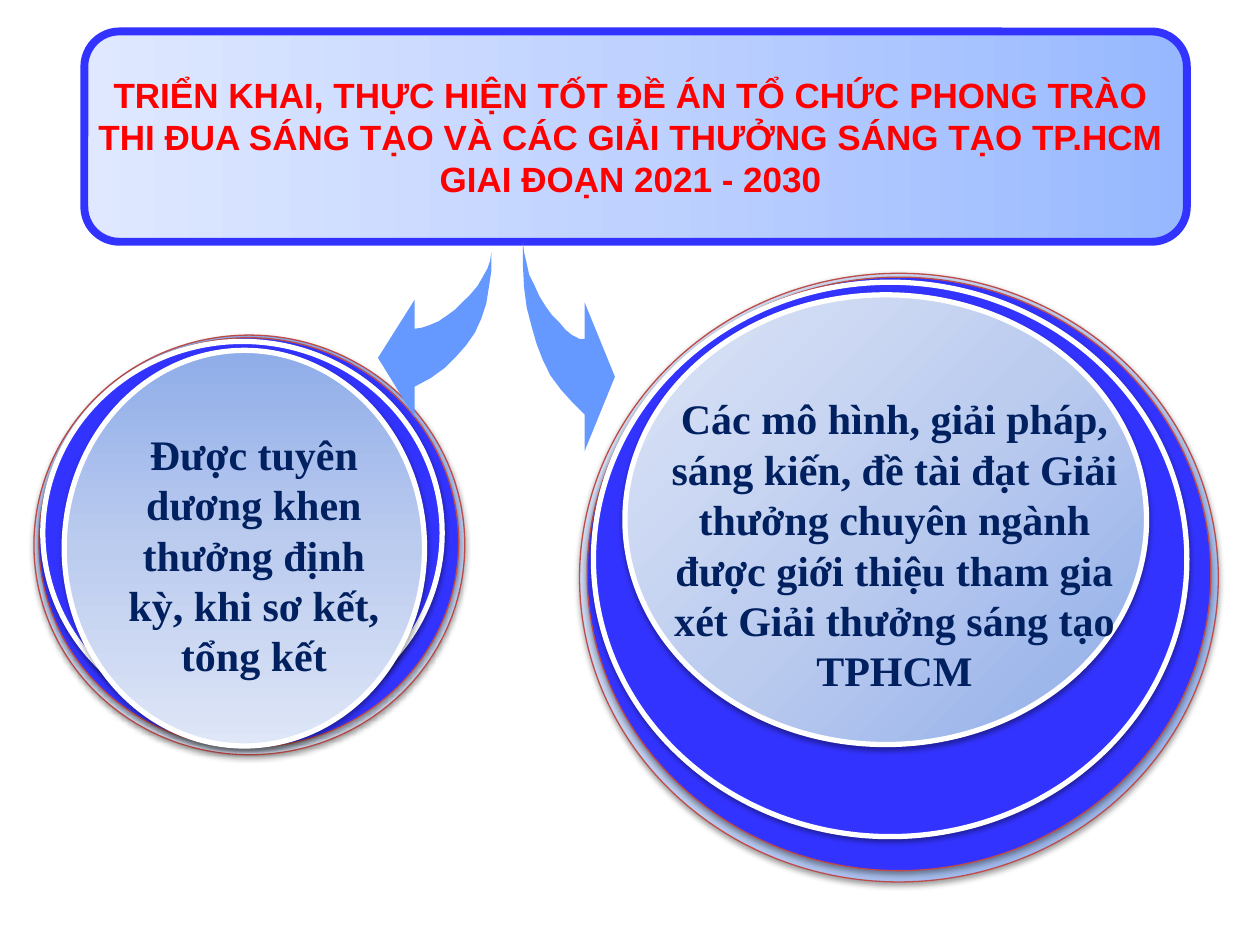
from pptx import Presentation
from pptx.dml.color import RGBColor
from pptx.enum.shapes import MSO_SHAPE as Shape
from pptx.enum.text import MSO_ANCHOR as Anchor, MSO_AUTO_SIZE as AutoSize, PP_ALIGN as Align
from pptx.oxml import parse_xml
from pptx.oxml.ns import nsdecls, qn
from pptx.util import Pt

SHADOW = (
    f'<a:outerShdw {nsdecls("a")} blurRad="40000" dist="20000" dir="5400000" rotWithShape="0">'
    '<a:srgbClr val="000000"><a:alpha val="38000"/></a:srgbClr></a:outerShdw>'
)
DOWN = '<a:lin ang="5400000" scaled="0"/>'
LEFTWARD = '<a:lin ang="10800000" scaled="0"/>'
FROM_CORNER = '<a:path path="circle"><a:fillToRect l="100000" t="100000"/></a:path>'


def rgb(value):
    return RGBColor.from_string(value)


class Deck:
    blue, sky, white, rust = "3333FF", "6699FF", "FFFFFF", "BF4C48"
    red, navy = "FF0000", "002060"
    disc_stops = ("8FADE9", "BCCCEF", "DEE6F7")
    title_stops = ("97B8FF", "BFD2FF", "DFE8FF")

    def __init__(self, slide):
        self.s = slide

    def gradient(self, sp, stops, direction):
        sp.fill.gradient()
        marks = "".join(
            f'<a:gs pos="{i * 50000}"><a:srgbClr val="{c}"/></a:gs>'
            for i, c in enumerate(stops)
        )
        props = sp._element.spPr
        props.replace(
            props.find(qn("a:gradFill")),
            parse_xml(
                f'<a:gradFill {nsdecls("a")} rotWithShape="1">'
                f"<a:gsLst>{marks}</a:gsLst>{direction}</a:gradFill>"
            ),
        )

    def outline(self, sp, color, width):
        sp.line.color.rgb = rgb(color)
        sp.line.width = Pt(width)

    def set_text(self, tf, text, font, size, color):
        p = tf.paragraphs[0]
        p.text = text
        p.alignment = Align.CENTER
        p.font.name = font
        p.font.size = Pt(size)
        p.font.bold = True
        p.font.color.rgb = rgb(color)

    def discs(self, boxes, direction):
        group = self.s.shapes.add_group_shape()
        styles = (
            (True, self.rust, 0.75),
            (False, self.rust, 0.75),
            (False, self.white, 3),
            (True, self.white, 3),
        )
        for box, (shaded, color, width) in zip(boxes, styles):
            sp = group.shapes.add_shape(Shape.OVAL, *map(Pt, box))
            if shaded:
                self.gradient(sp, self.disc_stops, direction)
            else:
                sp.fill.solid()
                sp.fill.fore_color.rgb = rgb(self.blue)
            self.outline(sp, color, width)
            sp.shadow.inherit = False
            sp._element.spPr.find(qn("a:effectLst")).append(parse_xml(SHADOW))

    def title(self, box, text):
        sp = self.s.shapes.add_shape(Shape.ROUNDED_RECTANGLE, *map(Pt, box))
        self.gradient(sp, self.title_stops, LEFTWARD)
        self.outline(sp, self.blue, 4.5)
        sp.shadow.inherit = False
        tf = sp.text_frame
        tf.word_wrap = False
        tf.vertical_anchor = Anchor.MIDDLE
        self.set_text(tf, text, "Arial", 20, self.red)

    def label(self, box, text):
        tf = self.s.shapes.add_textbox(*map(Pt, box)).text_frame
        tf.word_wrap = True
        tf.auto_size = AutoSize.SHAPE_TO_FIT_TEXT
        self.set_text(tf, text, "Times New Roman", 24, self.navy)

    def arrow(self, points):
        start, *rest = [(Pt(x), Pt(y)) for x, y in points]
        builder = self.s.shapes.build_freeform(*start)
        builder.add_line_segments(rest, close=True)
        sp = builder.convert_to_shape()
        sp.fill.solid()
        sp.fill.fore_color.rgb = rgb(self.sky)
        sp.line.fill.background()
        sp.shadow.inherit = False


LEFT_DISCS = (
    (19.4, 191.5, 246.2, 239.8),
    (22.3, 193, 239.8, 234),
    (24.5, 195.1, 228.2, 218.9),
    (36.7, 200.2, 205.9, 226.1),
)
RIGHT_DISCS = (
    (331.2, 156.2, 365, 347.8),
    (335.5, 158.4, 356.4, 339.1),
    (339.1, 161.3, 339.1, 316.8),
    (357.1, 168.5, 298.1, 257),
)
LEFT_ARROW = (
    (280.8, 144), (280.8, 154.8), (279.4, 164.2), (277.9, 173.5), (275, 182.2),
    (271.4, 190.1), (266.4, 197.3), (260.6, 203.8), (254.2, 210.2), (246.2, 216),
    (236.9, 221), (236.9, 238.3), (216, 204.5), (236.9, 171.4), (236.9, 187.9),
    (241.2, 187.2), (245.5, 185.8), (250.6, 183.6), (254.9, 180.7), (259.9, 177.1),
    (264.2, 172.8), (268.6, 168.5), (272.9, 163.4), (275.8, 158.4), (278.6, 153.4),
    (280.1, 149),
)
RIGHT_ARROW = (
    (298.8, 138.2), (298.8, 151.2), (299.5, 164.2), (301, 175.7), (303.8, 186.5),
    (306.7, 196.6), (310.3, 205.9), (314.6, 214.6), (320.4, 222.5), (326.9, 229.7),
    (334.1, 236.9), (334.1, 257.8), (351.4, 215.3), (334.1, 172.8), (334.1, 193.7),
    (331.2, 193.7), (326.9, 191.5), (323.3, 188.6), (319.7, 184.3), (315.4, 180),
    (311.8, 175), (308.2, 169.2), (305.3, 162.7), (302.4, 157), (301, 150.5),
    (299.5, 144),
)


def main():
    prs = Presentation()
    prs.slide_width, prs.slide_height = Pt(720), Pt(540)
    deck = Deck(prs.slides.add_slide(prs.slide_layouts[6]))
    deck.discs(LEFT_DISCS, DOWN)
    deck.discs(RIGHT_DISCS, FROM_CORNER)
    deck.title(
        (48.2, 18, 630, 120.2),
        "TRIỂN KHAI, THỰC HIỆN TỐT ĐỀ ÁN TỔ CHỨC PHONG TRÀO \n"
        "THI ĐUA SÁNG TẠO VÀ CÁC GIẢI THƯỞNG SÁNG TẠO TP.HCM \n"
        "GIAI ĐOẠN 2021 - 2030 ",
    )
    deck.label(
        (61.2, 241.2, 167.8, 152.6),
        "Được tuyên dương khen thưởng định kỳ, khi sơ kết, tổng kết",
    )
    deck.label(
        (372.2, 221, 277.9, 181.4),
        "Các mô hình, giải pháp, sáng kiến, đề tài đạt Giải thưởng chuyên ngành "
        "được giới thiệu tham gia xét Giải thưởng sáng tạo TPHCM",
    )
    deck.arrow(LEFT_ARROW)
    deck.arrow(RIGHT_ARROW)
    prs.save("out.pptx")


if __name__ == "__main__":
    main()
